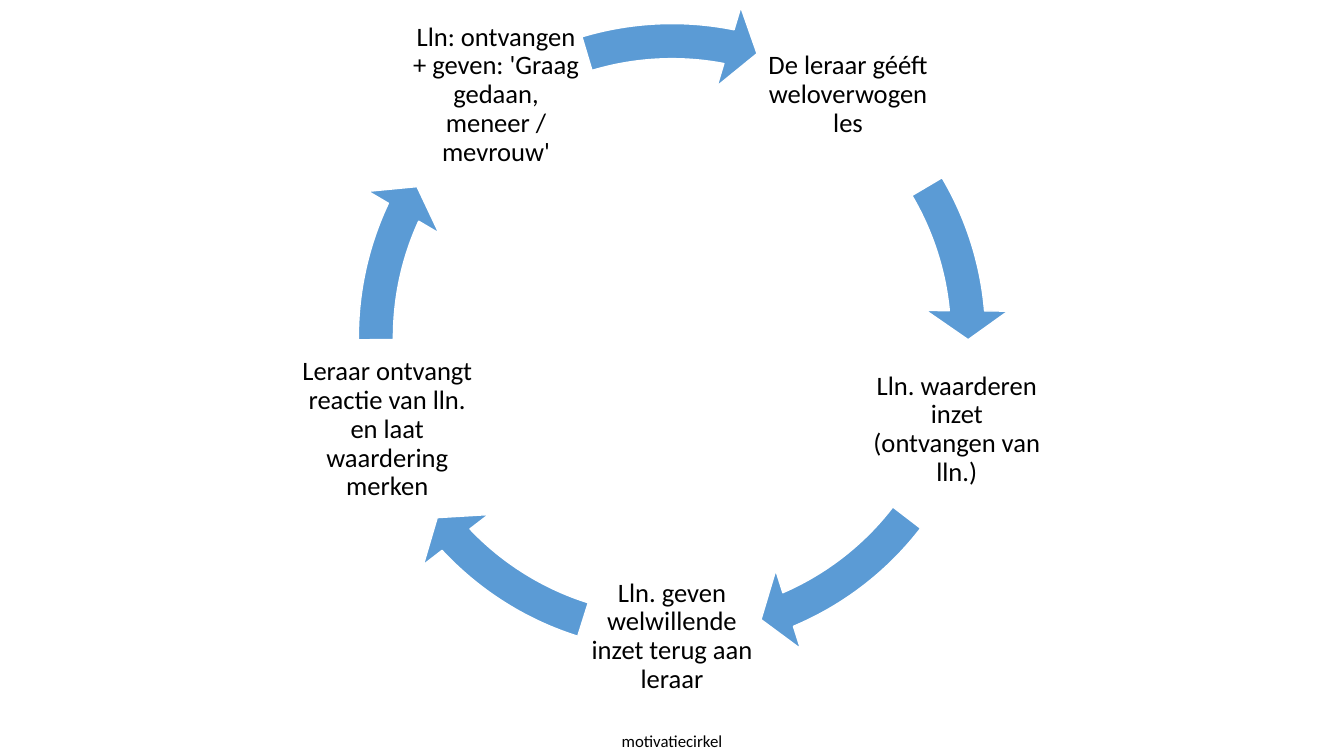
import math
from dataclasses import dataclass

import pptx
import pptx.dml.color
import pptx.enum.shapes
import pptx.enum.text
import pptx.util
from pptx.util import Inches

BLACK = pptx.dml.color.RGBColor(0x00, 0x00, 0x00)
WHITE = pptx.dml.color.RGBColor(0xFF, 0xFF, 0xFF)
BLUE = pptx.dml.color.RGBColor(0x5B, 0x9B, 0xD5)

SLIDE_W, SLIDE_H = 13.33, 7.5
CENTER_X, CENTER_Y = 6.665, 3.345
RADIUS = 2.97
LABEL_SIZE = 1.78
RING_SIZE = 6.69
FIRST_ANGLE = -54


@dataclass
class Step:
    """A label and the arrow after it, in degrees clockwise from the right."""
    text: str
    arrow_start: float
    arrow_end: float


STEPS = [
    Step("De leraar gééft weloverwogen les", 329.44, 354.89),
    Step("Lln. waarderen inzet (ontvangen van lln.)", 37.56, 66.91),
    Step("Lln. geven welwillende inzet terug aan leraar", 107.49, 136.84),
    Step("Leraar ontvangt reactie van lln. en laat waardering merken", 179.52, 204.96),
    Step("Lln: ontvangen + geven: 'Graag gedaan, meneer / mevrouw'", 253.31, 281.09),
]


def set_text(tf: pptx.text.text.TextFrame, text: str, size: float) -> None:
    tf.word_wrap = True
    tf.auto_size = pptx.enum.text.MSO_AUTO_SIZE.NONE
    p = tf.paragraphs[0]
    p.text = text
    p.alignment = pptx.enum.text.PP_ALIGN.CENTER
    p.line_spacing = 0.9
    p.font.size = pptx.util.Pt(size)
    p.font.name = "Calibri"
    p.font.color.rgb = BLACK


def add_title(s: pptx.slide.Slide, text: str) -> None:
    sp = s.shapes.title
    sp.left, sp.top = Inches(0), Inches(0)
    sp.width, sp.height = Inches(SLIDE_W), Inches(SLIDE_H)
    sp.text_frame.vertical_anchor = pptx.enum.text.MSO_ANCHOR.BOTTOM
    set_text(sp.text_frame, text, 12)


def add_label(s: pptx.slide.Slide, text: str, angle: float) -> None:
    x = CENTER_X + RADIUS * math.cos(math.radians(angle)) - LABEL_SIZE / 2
    y = CENTER_Y + RADIUS * math.sin(math.radians(angle)) - LABEL_SIZE / 2
    sp = s.shapes.add_textbox(Inches(x), Inches(y), Inches(LABEL_SIZE), Inches(LABEL_SIZE))
    tf = sp.text_frame
    tf.margin_left = tf.margin_right = tf.margin_top = tf.margin_bottom = Inches(0.03)
    tf.vertical_anchor = pptx.enum.text.MSO_ANCHOR.MIDDLE
    set_text(tf, text, 19)


def add_arrow(s: pptx.slide.Slide, start: float, end: float) -> None:
    sp = s.shapes.add_shape(
        pptx.enum.shapes.MSO_SHAPE.CIRCULAR_ARROW,
        Inches(CENTER_X - RING_SIZE / 2), Inches(CENTER_Y - RING_SIZE / 2),
        Inches(RING_SIZE), Inches(RING_SIZE))
    # Angle adjustments count 0.6 per degree
    for i, value in enumerate((0.052, 3.36, end * 0.6, start * 0.6, 0.061)):
        sp.adjustments[i] = value
    sp.shadow.inherit = False
    sp.fill.solid()
    sp.fill.fore_color.rgb = BLUE
    sp.line.color.rgb = WHITE
    sp.line.width = pptx.util.Pt(1)


def main() -> None:
    prs = pptx.Presentation()
    prs.slide_width, prs.slide_height = Inches(SLIDE_W), Inches(SLIDE_H)
    s = prs.slides.add_slide(prs.slide_layouts[0])
    subtitle = s.placeholders[1].element
    subtitle.getparent().remove(subtitle)

    add_title(s, "motivatiecirkel")
    for i, step in enumerate(STEPS):
        add_label(s, step.text, FIRST_ANGLE + i * 360 / len(STEPS))
        add_arrow(s, step.arrow_start, step.arrow_end)
    prs.save("out.pptx")


if __name__ == "__main__":
    main()
